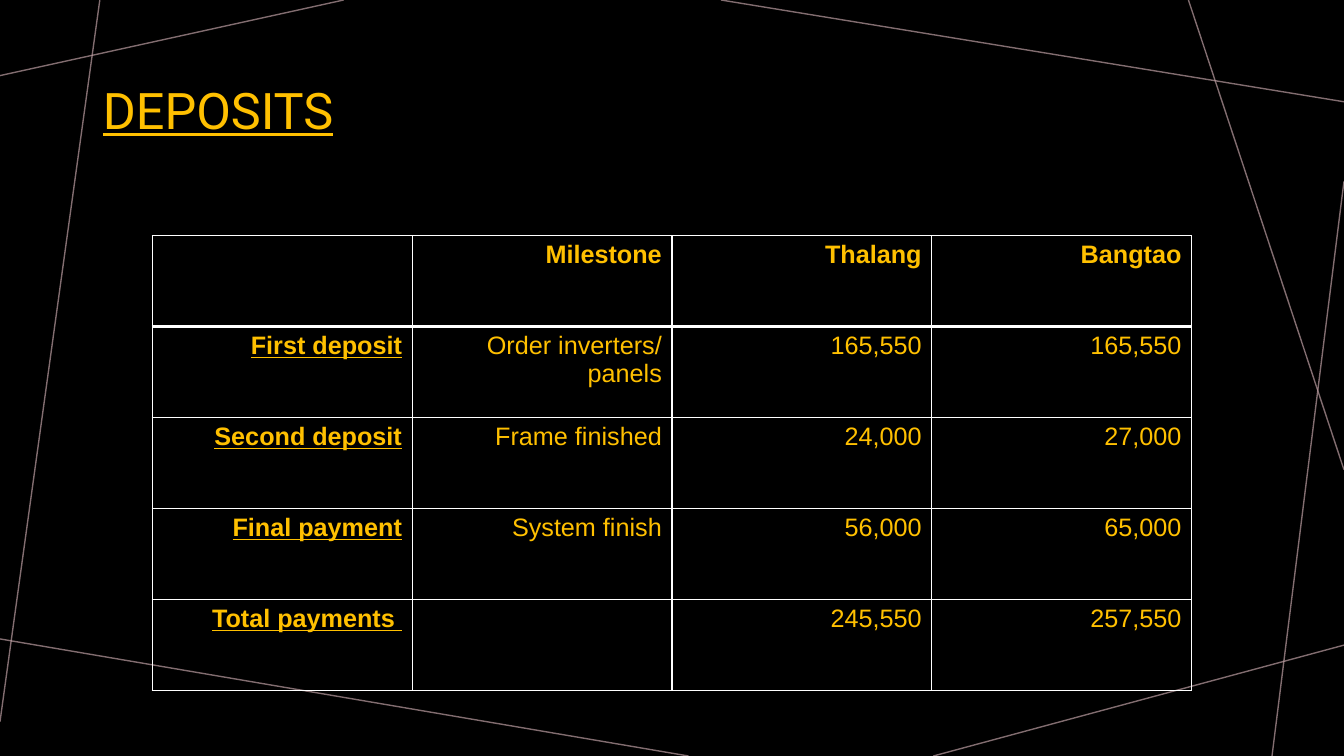
from lxml import etree
from pptx import Presentation
from pptx.dml.color import RGBColor
from pptx.enum.shapes import MSO_CONNECTOR
from pptx.enum.text import MSO_ANCHOR, MSO_AUTO_SIZE, PP_ALIGN
from pptx.oxml.ns import qn
from pptx.util import Pt

STRAIGHT = MSO_CONNECTOR.STRAIGHT
LEFT, RIGHT = PP_ALIGN.LEFT, PP_ALIGN.RIGHT
MIDDLE = MSO_ANCHOR.MIDDLE
NO_AUTOFIT = MSO_AUTO_SIZE.NONE

BLACK = RGBColor(0x00, 0x00, 0x00)
WHITE = RGBColor(0xFF, 0xFF, 0xFF)
GOLD = RGBColor(0xFF, 0xC0, 0x00)
ROSE = RGBColor(0xBA, 0x9C, 0xA0)

WIDTH, HEIGHT = 960, 540
TITLE = "DEPOSITS"
TITLE_BOX = (66.25, 28.8, 828, 104.4)
DEPOSITS = [
    ("", "Milestone", "Thalang", "Bangtao"),
    ("First deposit", "Order inverters/ panels", "165,550", "165,550"),
    ("Second deposit", "Frame finished", "24,000", "27,000"),
    ("Final payment", "System finish", "56,000", "65,000"),
    ("Total payments ", "", "245,550", "257,550"),
]
TABLE_LEFT, TABLE_TOP = 108.8, 168.3
COLUMN_WIDTH, ROW_HEIGHT = 185.6, 65
BACKGROUND_LINES = [
    (245.5, 0, 0, 54),
    (71.3, 0, 0, 515.5),
    (491.8, HEIGHT, 0, 456.4),
    (WIDTH, 460.8, 666.7, HEIGHT),
    (WIDTH, 129.6, 908.6, HEIGHT),
    (WIDTH, 335.5, 848.9, 0),
    (WIDTH, 72.7, 515, 0),
]


def write(text_frame, text, alignment, **font_format):
    paragraph = text_frame.paragraphs[0]
    paragraph.alignment = alignment
    if text:
        run = paragraph.add_run()
        run.text = text
        run.font.color.rgb = GOLD
        for name, value in font_format.items():
            setattr(run.font, name, value)
    return paragraph


def set_borders(cell, widths):
    properties = cell._tc.get_or_add_tcPr()
    for side, width in widths.items():
        border = etree.SubElement(properties, qn(f"a:ln{side}"), w=str(Pt(width)))
        fill = etree.SubElement(border, qn("a:solidFill"))
        etree.SubElement(fill, qn("a:srgbClr"), val=str(WHITE))


def add_background_line(slide, ends):
    line = slide.shapes.add_connector(STRAIGHT, *map(Pt, ends))
    line.line.width = Pt(1)
    line.line.color.rgb = ROSE
    color = line.line._ln.find(".//" + qn("a:srgbClr"))
    etree.SubElement(color, qn("a:alpha"), val="70000")
    etree.SubElement(line._element.spPr, qn("a:effectLst"))


def add_title(slide):
    title = slide.shapes.title
    title.left, title.top, title.width, title.height = map(Pt, TITLE_BOX)
    frame = title.text_frame
    frame.auto_size = NO_AUTOFIT
    frame.vertical_anchor = MIDDLE
    paragraph = write(frame, TITLE, LEFT, name="Roboto", size=Pt(36), underline=True)
    paragraph.line_spacing = 0.9


def add_deposit_table(slide):
    rows, columns = len(DEPOSITS), len(DEPOSITS[0])
    box = (TABLE_LEFT, TABLE_TOP, columns * COLUMN_WIDTH, rows * ROW_HEIGHT)
    table = slide.shapes.add_table(rows, columns, *map(Pt, box)).table
    table.horz_banding = False
    for column in table.columns:
        column.width = Pt(COLUMN_WIDTH)
    for row_index, values in enumerate(DEPOSITS):
        table.rows[row_index].height = Pt(ROW_HEIGHT)
        is_header = row_index == 0
        top = 3 if row_index == 1 else 1
        bottom = 3 if is_header else 1
        for column_index, value in enumerate(values):
            is_label = column_index == 0
            cell = table.cell(row_index, column_index)
            set_borders(cell, {"L": 1, "R": 1, "T": top, "B": bottom})
            cell.fill.background()
            write(cell.text_frame, value, RIGHT, name="Arial", size=Pt(18),
                  bold=is_header or is_label, underline=is_label)


def main():
    presentation = Presentation()
    presentation.slide_width, presentation.slide_height = Pt(WIDTH), Pt(HEIGHT)
    slide = presentation.slides.add_slide(presentation.slide_layouts[5])
    slide.background.fill.solid()
    slide.background.fill.fore_color.rgb = BLACK
    for ends in BACKGROUND_LINES:
        add_background_line(slide, ends)
    add_title(slide)
    add_deposit_table(slide)
    presentation.save("out.pptx")


if __name__ == "__main__":
    main()
